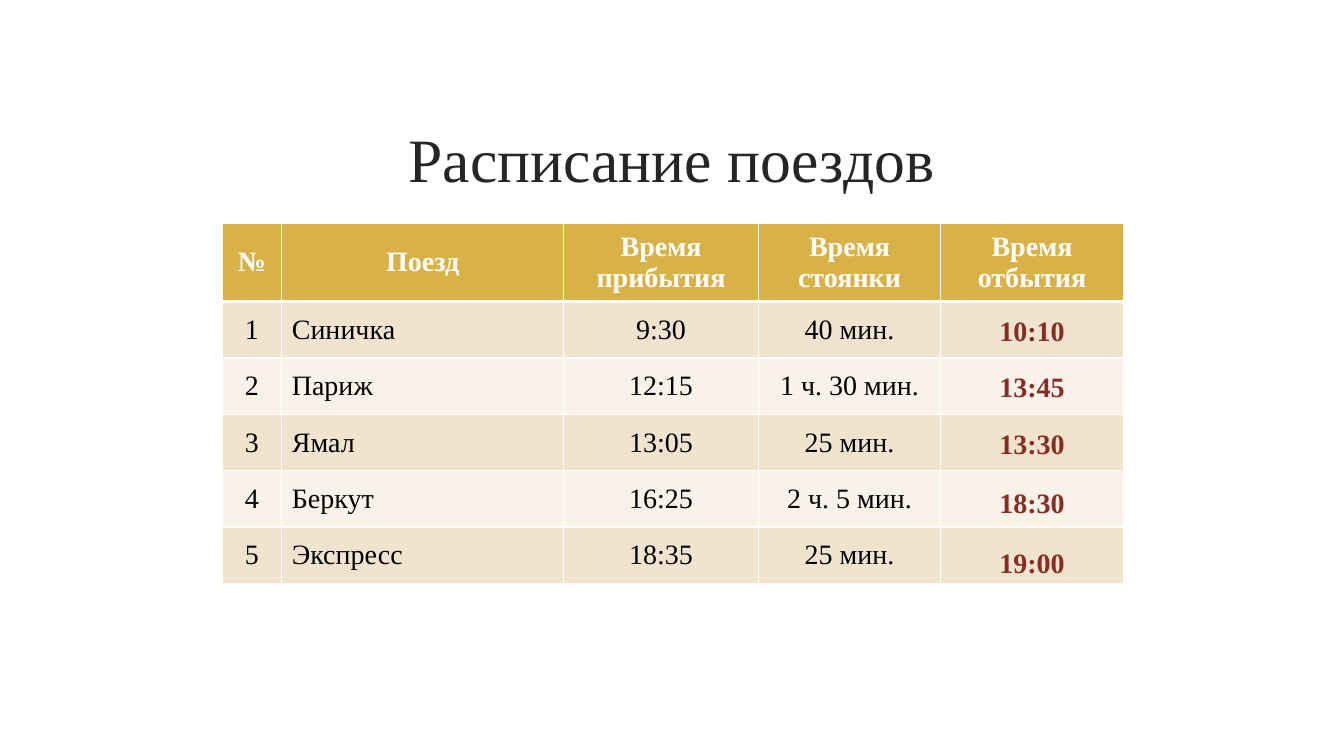
from lxml import etree
from pptx import Presentation
from pptx.dml.color import RGBColor
from pptx.enum.text import MSO_ANCHOR, MSO_AUTO_SIZE, PP_ALIGN
from pptx.oxml.ns import qn
from pptx.util import Cm, Pt

LEFT, CENTER = PP_ALIGN.LEFT, PP_ALIGN.CENTER
MIDDLE = MSO_ANCHOR.MIDDLE
FONT = "Times New Roman"

# Content
TITLE = "Расписание поездов"
HEADER = ("№", "Поезд", "Время прибытия", "Время стоянки", "Время отбытия")
TRAINS = [
    ("1", "Синичка", "9:30", "40 мин."),
    ("2", "Париж", "12:15", "1 ч. 30 мин."),
    ("3", "Ямал", "13:05", "25 мин."),
    ("4", "Беркут", "16:25", "2 ч. 5 мин."),
    ("5", "Экспресс", "18:35", "25 мин."),
]
# Departure time and the top of its label, cm
DEPARTURES = [("10:10", 7.77), ("13:45", 9.19), ("13:30", 10.62),
              ("18:30", 12.12), ("19:00", 13.61)]

# Layout, cm
COL_WIDTHS = (1.5, 7.11, 4.9, 4.6, 4.6)
HEADER_H, ROW_H = 1.98, 1.42
TABLE_LEFT, TABLE_TOP = 5.6, 5.62
LABEL_W, LABEL_H = 2.46, 1.11
LABEL_LEFT = TABLE_LEFT + sum(COL_WIDTHS[:-1]) + (COL_WIDTHS[-1] - LABEL_W) / 2

GOLD, BANDS = "D9B247", ("F1E4CF", "F8F2E9")
WHITE, BLACK, DARK, RED = "FFFFFF", "000000", "262626", "882C25"


def rgb(color):
    return RGBColor.from_string(color)


def put_text(tf, text, size=20, color=BLACK, bold=False, align=CENTER):
    tf.word_wrap = True
    p = tf.paragraphs[0]
    p.alignment = align
    r = p.add_run()
    r.text = text
    r.font.name, r.font.size, r.font.bold = FONT, Pt(size), bold
    r.font.color.rgb = rgb(color)


def set_border(cell, side, width):
    tc_pr = cell._tc.get_or_add_tcPr()
    ln = etree.SubElement(tc_pr, qn("a:ln" + side), w=str(Pt(width)))
    fill = etree.SubElement(ln, qn("a:solidFill"))
    etree.SubElement(fill, qn("a:srgbClr"), val=WHITE)


prs = Presentation()
prs.slide_width, prs.slide_height = Cm(33.87), Cm(19.05)
s = prs.slides.add_slide(prs.slide_layouts[5])

# Title
title = s.shapes.title
title.left, title.top, title.width, title.height = Cm(3.6), Cm(2.72), Cm(26.67), Cm(2.54)
title.text_frame.vertical_anchor = MIDDLE
put_text(title.text_frame, TITLE, size=44, color=DARK)

# Timetable; departure times are laid over its last column
rows = [HEADER] + [train + ("",) for train in TRAINS]
table = s.shapes.add_table(
    len(rows), len(HEADER), Cm(TABLE_LEFT), Cm(TABLE_TOP),
    Cm(sum(COL_WIDTHS)), Cm(HEADER_H + ROW_H * len(TRAINS))).table
for col, width in zip(table.columns, COL_WIDTHS):
    col.width = Cm(width)
for i, row in enumerate(rows):
    head = i == 0
    table.rows[i].height = Cm(HEADER_H if head else ROW_H)
    for j, text in enumerate(row):
        cell = table.cell(i, j)
        cell.vertical_anchor = MIDDLE
        for side, width in (("L", 1), ("R", 1), ("T", 3 if i == 1 else 1), ("B", 3 if head else 1)):
            set_border(cell, side, width)
        cell.fill.solid()
        cell.fill.fore_color.rgb = rgb(GOLD if head else BANDS[(i - 1) % 2])
        if text:
            put_text(cell.text_frame, text, color=WHITE if head else BLACK, bold=head,
                     align=LEFT if j == 1 and not head else CENTER)

# Departure times
for time, top in DEPARTURES:
    tf = s.shapes.add_textbox(Cm(LABEL_LEFT), Cm(top), Cm(LABEL_W), Cm(LABEL_H)).text_frame
    tf.auto_size = MSO_AUTO_SIZE.SHAPE_TO_FIT_TEXT
    put_text(tf, time, color=RED, bold=True)

prs.save("out.pptx")
